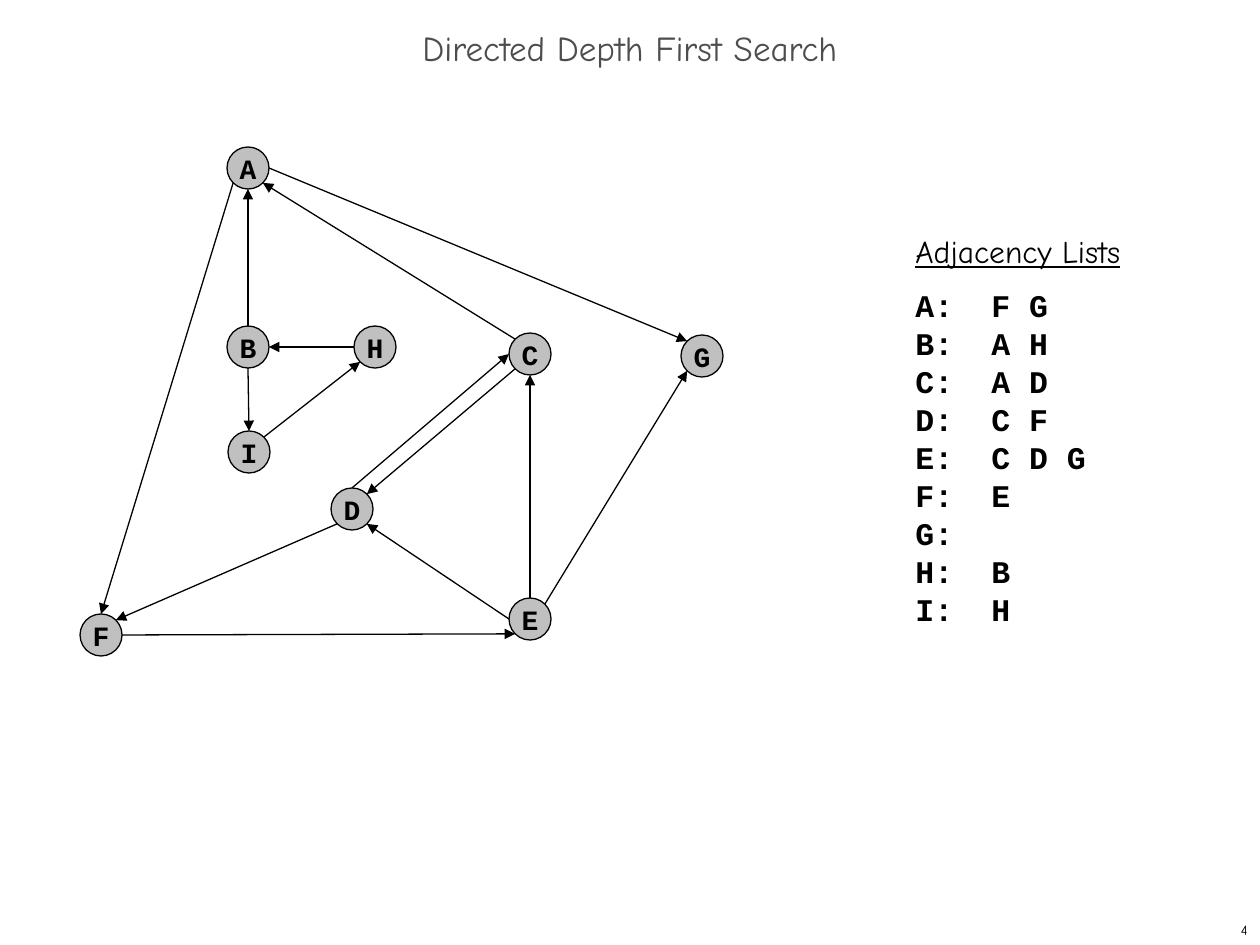
from math import cos, radians, sin

from lxml.etree import SubElement
from pptx import Presentation
from pptx.dml.color import RGBColor as RGB
from pptx.enum.shapes import MSO_CONNECTOR as CONN, MSO_SHAPE as SHAPE
from pptx.enum.text import MSO_ANCHOR as ANCHOR, MSO_AUTO_SIZE as FIT, PP_ALIGN as ALIGN
from pptx.oxml.ns import qn
from pptx.util import Inches, Pt

THEME = {
    "hand": "Comic Neue", "mono": "Courier New",
    "ink": RGB(0, 0, 0), "title": RGB(0x4D, 0x4D, 0x4D), "node": RGB(0xC0, 0xC0, 0xC0),
    "title_pt": 20, "list_pt": 18, "node_pt": 16, "number_pt": 8, "line_pt": 0.75,
}
PX = Inches(1) / 126
RADIUS = 21


def px(*lengths):
    return [round(n * PX) for n in lengths]


def write(p, text, font="hand", size="list_pt", color="ink", align=ALIGN.LEFT,
          bold=False, underline=False, spacing=None, before=None):
    """Fill a paragraph; a vertical tab in the text is a line break."""
    p.text = text
    p.alignment, p.line_spacing, p.space_before = align, spacing, before
    for r in p.runs:
        f = r.font
        f.name, f.size, f.bold, f.underline = THEME[font], Pt(THEME[size]), bold, underline
        f.color.rgb = THEME[color]


prs = Presentation()
prs.slide_width, prs.slide_height = px(1260, 945)
s = prs.slides.add_slide(prs.slide_layouts[5])

# Title
title = s.shapes.title
title.left, title.top, title.width, title.height = px(0, 21, 1260, 63)
tf = title.text_frame
tf.auto_size, tf.vertical_anchor = FIT.NONE, ANCHOR.MIDDLE
write(tf.paragraphs[0], "Directed Depth First Search", size="title_pt", color="title",
      align=ALIGN.CENTER, spacing=0.7)

# Slide number
tf = s.shapes.add_textbox(*px(998, 914, 262, 31)).text_frame
tf.word_wrap, tf.vertical_anchor = True, ANCHOR.MIDDLE
write(tf.paragraphs[0], "4", size="number_pt", align=ALIGN.RIGHT)

# Adjacency lists
adjacency = {"A": "F G", "B": "A H", "C": "A D", "D": "C F", "E": "C D G",
             "F": "E", "G": "", "H": "B", "I": "H"}
tf = s.shapes.add_textbox(*px(903, 224, 260, 411)).text_frame
tf.word_wrap, tf.vertical_anchor = False, ANCHOR.MIDDLE
write(tf.paragraphs[0], "Adjacency Lists", underline=True, spacing=Pt(21.7))
rows = tf.add_paragraph()
tabs = SubElement(rows._p.get_or_add_pPr(), qn("a:tabLst"))
SubElement(tabs, qn("a:tab"), pos=str(px(76)[0]), algn="l")
lines = [f"{name}:\t{targets}".rstrip() for name, targets in adjacency.items()]
write(rows, "\v".join(lines), font="mono", bold=True, spacing=Pt(21.7), before=Pt(9))

# Graph nodes, by centre
nodes = {"F": (101, 635), "A": (248, 168), "B": (248, 347), "C": (530, 354), "G": (702, 356),
         "D": (352, 509), "E": (530, 619), "H": (375, 347), "I": (249, 452)}
for name, (x, y) in nodes.items():
    sp = s.shapes.add_shape(SHAPE.OVAL, *px(x - RADIUS, y - RADIUS, 2 * RADIUS, 2 * RADIUS))
    sp.shadow.inherit = False
    sp.fill.solid()
    sp.fill.fore_color.rgb = THEME["node"]
    sp.line.color.rgb, sp.line.width = THEME["ink"], Pt(THEME["line_pt"])
    tf = sp.text_frame
    tf.word_wrap, tf.vertical_anchor = False, ANCHOR.MIDDLE
    write(tf.paragraphs[0], name, font="mono", size="node_pt", align=ALIGN.CENTER, bold=True)

# Directed edges: node and rim site at each end; sites go counter-clockwise from the top
edges = ["A3 F0", "C1 A5", "A6 G1", "E2 D5", "F6 E3", "D3 F7", "E7 G3",
         "E0 C4", "C3 D7", "D0 C2", "B0 A4", "H2 B6", "I7 H3", "B4 I0"]
for edge in edges:
    ends = []
    for name, site in edge.split():
        x, y = nodes[name]
        angle = radians(90 + 45 * int(site))
        ends += [x + RADIUS * cos(angle), y - RADIUS * sin(angle)]
    arrow = s.shapes.add_connector(CONN.STRAIGHT, *px(*ends))
    arrow.line.color.rgb, arrow.line.width = THEME["ink"], Pt(THEME["line_pt"])
    SubElement(arrow.line._get_or_add_ln(), qn("a:tailEnd"), type="triangle")
    SubElement(arrow._element.spPr, qn("a:effectLst"))

prs.save("out.pptx")
